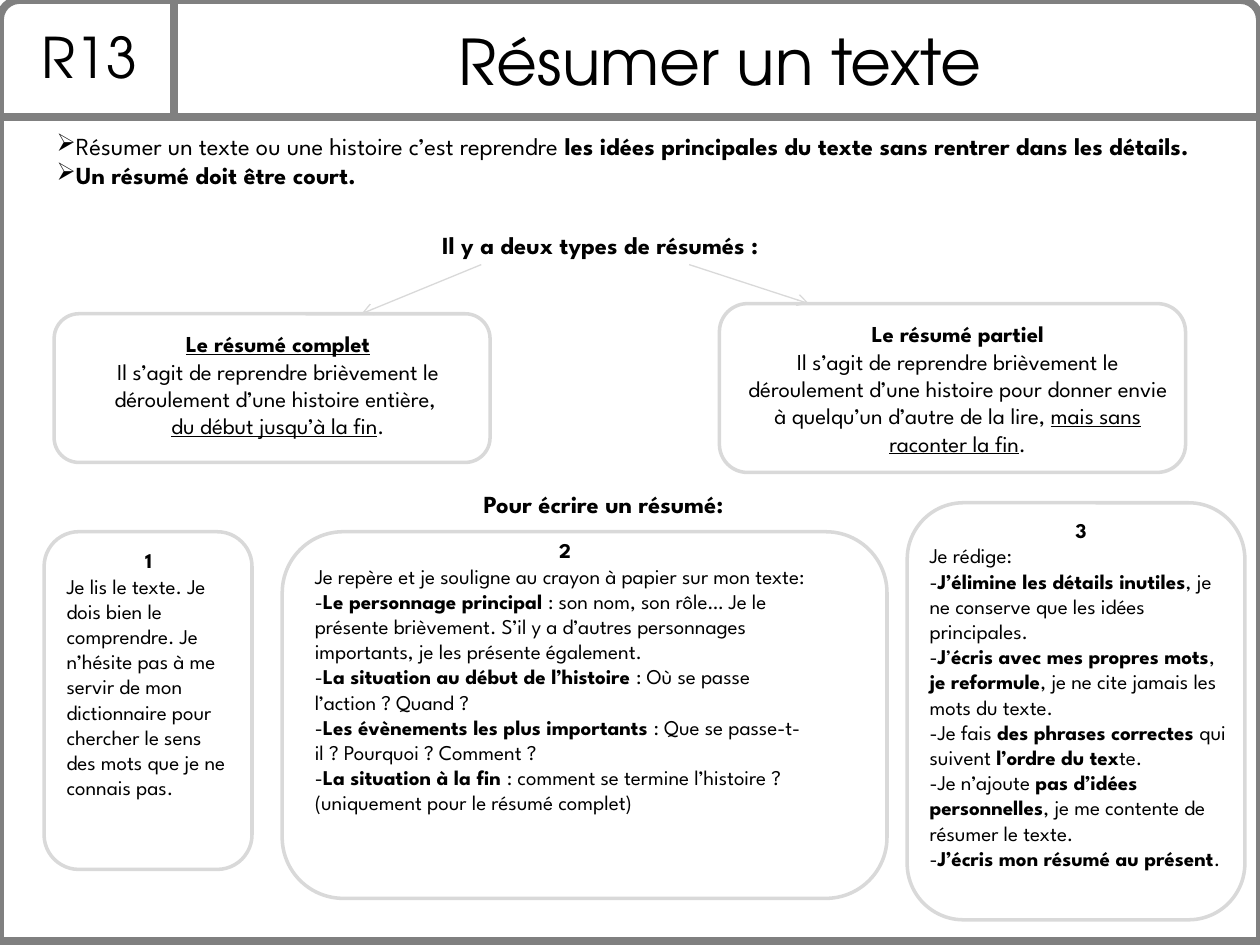
"""Build the reading lesson slide R13, on how to sum up a text."""
from lxml import etree
from pptx import Presentation
from pptx.dml.color import RGBColor
from pptx.enum.shapes import MSO_CONNECTOR, MSO_SHAPE
from pptx.enum.text import MSO_AUTO_SIZE, PP_ALIGN
from pptx.oxml.ns import qn
from pptx.util import Inches, Pt

BLACK = RGBColor(0x00, 0x00, 0x00)
WHITE = RGBColor(0xFF, 0xFF, 0xFF)
FRAME_GREY = RGBColor(0x80, 0x80, 0x80)
CARD_GREY = RGBColor(0xD9, 0xD9, 0xD9)
CENTER, LEFT = PP_ALIGN.CENTER, PP_ALIGN.LEFT
STRAIGHT = MSO_CONNECTOR.STRAIGHT
RECTANGLE = MSO_SHAPE.RECTANGLE
ROUNDED = MSO_SHAPE.ROUNDED_RECTANGLE
ROUNDED_TOP = MSO_SHAPE.ROUND_2_SAME_RECTANGLE
FIT_TEXT = MSO_AUTO_SIZE.SHAPE_TO_FIT_TEXT
TITLE_FONT, BODY_FONT = "TeX Gyre Adventor", "League Spartan"

deck = Presentation()
deck.slide_width, deck.slide_height = Inches(10), Inches(7.5)
page = deck.slides.add_slide(deck.slide_layouts[6])
COLUMN, ROW = deck.slide_width / 100, deck.slide_height / 75


def place(left, top, width, height):
    return [int(left * COLUMN), int(top * ROW), int(width * COLUMN), int(height * ROW)]


def add_text(text, area, size=14, font=BODY_FONT, align=CENTER, heading=False, bullet=None):
    """Write one paragraph per line; *stars* mark bold and _underscores_ underline."""
    box = page.shapes.add_textbox(*place(*area))
    frame = box.text_frame
    frame.word_wrap = True
    frame.auto_size = FIT_TEXT
    for number, line in enumerate(text.split("\n")):
        para = frame.add_paragraph() if number else frame.paragraphs[0]
        para.alignment = CENTER if heading and number == 0 else align
        if bullet:
            props = para._p.get_or_add_pPr()
            props.set("marL", "0")
            props.set("indent", "0")
            etree.SubElement(props, qn("a:buChar")).set("char", bullet)
        for bold, chunk in enumerate(line.split("*")):
            for underline, piece in enumerate(chunk.split("_")):
                if piece:
                    span = para.add_run()
                    span.text = piece
                    span.font.name = font
                    span.font.size = Pt(size)
                    span.font.bold = bold % 2 == 1
                    span.font.underline = underline % 2 == 1
                    span.font.color.rgb = BLACK


panels = [
    (ROUNDED_TOP, (0, 0, 100, 9.3), FRAME_GREY, 4.5),
    (RECTANGLE, (0, 9.3, 100, 65.4), FRAME_GREY, 4.5),
    (ROUNDED, (4.3, 24.9, 34.6, 11.8), CARD_GREY, 2),
    (ROUNDED, (57.1, 24.1, 37, 13.4), CARD_GREY, 2),
    (ROUNDED, (3.5, 42.2, 16.5, 26.8), CARD_GREY, 2),
    (ROUNDED, (22.4, 42.2, 48, 29.1), CARD_GREY, 2),
    (ROUNDED, (72, 39.9, 26.8, 33.1), CARD_GREY, 2),
]
for preset, area, color, weight in panels:
    panel = page.shapes.add_shape(preset, *place(*area))
    panel.shadow.inherit = False
    panel.fill.solid()
    panel.fill.fore_color.rgb = WHITE
    panel.line.color.rgb = color
    panel.line.width = Pt(weight)

lines = [
    ((13.8, 0, 13.8, 9.3), FRAME_GREY, 4.5, False),
    ((38.2, 21, 28.7, 24.9), CARD_GREY, 0.75, True),
    ((54.7, 21, 64.2, 24.1), CARD_GREY, 0.75, True),
]
for ends, color, weight, pointed in lines:
    connector = page.shapes.add_connector(STRAIGHT, *place(*ends))
    connector.line.color.rgb = color
    connector.line.width = Pt(weight)
    if pointed:
        outline = connector.line._get_or_add_ln()
        etree.SubElement(outline, qn("a:tailEnd")).set("type", "arrow")
    etree.SubElement(connector._element.spPr, qn("a:effectLst"))

add_text("R13", (1.2, 1.3, 11.8, 6.4), size=32, font=TITLE_FONT)
add_text("Résumer un texte", (15.4, 1.3, 83.5, 7.1), size=36, font=TITLE_FONT)

add_text(
    "Résumer un texte ou une histoire c’est reprendre "
    "*les idées principales du texte sans rentrer dans les détails.*\n"
    "*Un résumé doit être court.*",
    (3.5, 9.9, 94.5, 8.1), align=LEFT, bullet="➢")
add_text("*Il y a deux types de résumés :*", (27.2, 17.8, 40.9, 3.4))
add_text("*Pour écrire un résumé:*", (37.4, 38.3, 24.4, 3.4), align=LEFT)

add_text(
    "*_Le résumé complet_*\n"
    "Il s’agit de reprendre brièvement le déroulement d’une histoire entière, \n"
    "_du début jusqu’à la fin_.",
    (5.1, 25.7, 33.9, 9.8), size=13)
add_text(
    "*Le résumé partiel*\n"
    "Il s’agit de reprendre brièvement le déroulement d’une histoire pour donner envie "
    "à quelqu’un d’autre de la lire, _mais sans raconter la fin_.",
    (57.9, 24.9, 36.2, 11.9), size=13)

steps = [
    ((4.3, 43, 15, 25.2),
     "*1*\n"
     "Je lis le texte. Je dois bien le comprendre. Je n’hésite pas à me servir de mon "
     "dictionnaire pour chercher le sens des mots que je ne connais pas."),
    ((24, 42.2, 41.7, 27.3),
     "*2*\n"
     "Je repère et je souligne au crayon à papier sur mon texte:\n"
     "-*Le personnage principal *: son nom, son rôle… Je le présente brièvement. "
     "S’il y a d’autres personnages importants, je les présente également.\n"
     "-*La situation au début de l’histoire *: Où se passe l’action ? Quand ?\n"
     "-*Les évènements les plus importants *: Que se passe-t-il ? Pourquoi ? Comment ?\n"
     "-*La situation à la fin *: comment se termine l’histoire ? "
     "(uniquement pour le résumé complet)"),
    ((72.8, 40.6, 26, 31.3),
     "*3*\n"
     "Je rédige:\n"
     "-*J’élimine les détails inutiles*, je ne conserve que les idées principales.\n"
     "-*J*’*écris avec mes propres mots*, *je reformule*, je ne cite jamais les mots "
     "du texte.\n"
     "-Je fais *des phrases correctes *qui suivent *l’ordre du tex*te.\n"
     "-Je n’ajoute *pas d’idées personnelles*, je me contente de résumer le texte.\n"
     "-*J’écris mon résumé au présent*."),
]
for area, text in steps:
    add_text(text, area, size=12, align=LEFT, heading=True)

deck.save("out.pptx")
